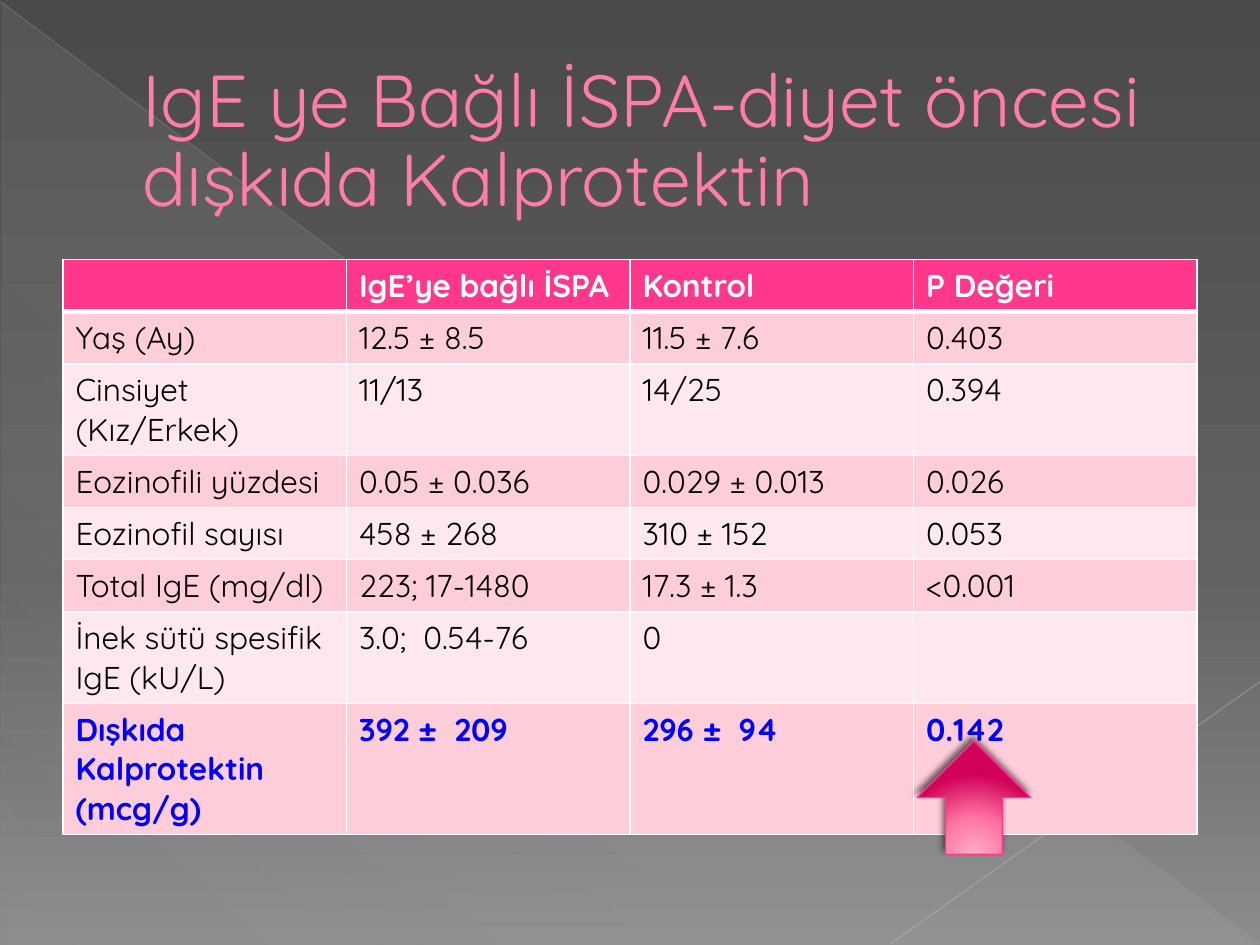
from dataclasses import dataclass

from lxml import etree
from pptx import Presentation
from pptx.dml.color import RGBColor
from pptx.enum.shapes import MSO_CONNECTOR, MSO_SHAPE
from pptx.enum.text import MSO_ANCHOR, MSO_AUTO_SIZE, PP_ALIGN
from pptx.oxml.ns import qn
from pptx.slide import Slide
from pptx.util import Inches, Pt

STRAIGHT = MSO_CONNECTOR.STRAIGHT
RIGHT_TRIANGLE = MSO_SHAPE.RIGHT_TRIANGLE
UP_ARROW = MSO_SHAPE.UP_ARROW
MIDDLE = MSO_ANCHOR.MIDDLE
SHRINK = MSO_AUTO_SIZE.TEXT_TO_FIT_SHAPE
LEFT = PP_ALIGN.LEFT

BLACK = RGBColor(0x00, 0x00, 0x00)
WHITE = RGBColor(0xFF, 0xFF, 0xFF)
BLUE = RGBColor(0x00, 0x00, 0xFF)
PINK = RGBColor(0xFF, 0x38, 0x8C)
TITLE_PINK = RGBColor(0xFF, 0x7D, 0xA7)
OUTLINE_PINK = RGBColor(0xB1, 0x27, 0x61)
ROSE = RGBColor(0xFF, 0xCE, 0xDA)
PALE_ROSE = RGBColor(0xFF, 0xE8, 0xEE)
ARROW_LIGHT = RGBColor(0xFF, 0xAF, 0xC5)
ARROW_MIDDLE = RGBColor(0xFF, 0x75, 0xA3)
ARROW_DARK = RGBColor(0xD1, 0x00, 0x58)
DARK_GREY = RGBColor(0x4A, 0x4A, 0x4A)
MIDDLE_GREY = RGBColor(0x62, 0x62, 0x62)
LIGHT_GREY = RGBColor(0x8C, 0x8C, 0x8C)
VEIL_GREY = RGBColor(0xD2, 0xD2, 0xD2)
LONG_LINE_GREY = RGBColor(0xBF, 0xBF, 0xBF)
SHORT_LINE_GREY = RGBColor(0xC6, 0xC6, 0xC6)

WIDTH, HEIGHT = Inches(10), Inches(7.5)
COLUMNS, ROWS = 20, 15

RESULTS = [
    ["", "IgE’ye bağlı İSPA", "Kontrol", "P Değeri"],
    ["Yaş (Ay)", "12.5 ± 8.5", "11.5 ± 7.6", "0.403"],
    ["Cinsiyet (Kız/Erkek)", "11/13", "14/25", "0.394"],
    ["Eozinofili yüzdesi", "0.05 ± 0.036", "0.029 ± 0.013", "0.026"],
    ["Eozinofil sayısı", "458 ± 268", "310 ± 152", "0.053"],
    ["Total IgE (mg/dl)", "223; 17-1480", "17.3 ± 1.3", "<0.001"],
    ["İnek sütü spesifik IgE (kU/L)", "3.0;  0.54-76", "0", ""],
    ["Dışkıda Kalprotektin (mcg/g)", "392 ±  209", "296 ±  94", "0.142"],
]


def add(parent, tag, **attributes):
    values = {name: str(value) for name, value in attributes.items()}
    return etree.SubElement(parent, qn(tag), values)


def add_color(parent, color, opacity=100):
    element = add(parent, "a:srgbClr", val=color)
    if opacity < 100:
        add(element, "a:alpha", val=opacity * 1000)


def grid(column, row):
    return int(WIDTH * column / COLUMNS), int(HEIGHT * row / ROWS)


@dataclass
class SlideBuilder:
    slide: Slide
    font_name: str = "Quicksand"
    title_size: float = 42
    table_size: float = 18

    def format_runs(self, paragraph, size, color, bold=False):
        for run in paragraph.runs:
            run.font.name = self.font_name
            run.font.size = Pt(size)
            run.font.color.rgb = color
            run.font.bold = bold

    def gradient(self, fill, container, stops, angle=None, focus=None):
        fill.gradient()
        gradient = container.find(".//" + qn("a:gradFill"))
        for child in list(gradient):
            gradient.remove(child)
        stop_list = add(gradient, "a:gsLst")
        for position, color, opacity in stops:
            stop = add(stop_list, "a:gs", pos=position * 1000)
            add_color(stop, color, opacity)
        if focus:
            circle = add(gradient, "a:path", path="circle")
            sides = {side: share * 1000 for side, share in zip("ltrb", focus)}
            add(circle, "a:fillToRect", **sides)
        else:
            add(gradient, "a:lin", ang=angle * 60000, scaled=0)

    def background(self, stops, angle):
        self.gradient(self.slide.background.fill, self.slide._element, stops, angle)

    def shape(self, kind, column, row, columns, rows, stops, **direction):
        shape = self.slide.shapes.add_shape(kind, *grid(column, row), *grid(columns, rows))
        shape.shadow.inherit = False
        shape.line.fill.background()
        self.gradient(shape.fill, shape._element.spPr, stops, **direction)
        return shape

    def arrow(self, column, row, columns, rows, stops, focus):
        arrow = self.shape(UP_ARROW, column, row, columns, rows, stops, focus=focus)
        arrow.line.color.rgb = PINK
        arrow.line.width = Pt(0.75)
        effects = arrow._element.spPr.find(qn("a:effectLst"))
        shadow = add(effects, "a:outerShdw", blurRad=Pt(4), dist=Pt(3),
                     dir=245 * 60000, rotWithShape=0)
        add_color(shadow, BLACK, 60)

    def line(self, start, end, color, width, opacity):
        line = self.slide.shapes.add_connector(STRAIGHT, *grid(*start), *grid(*end))
        line.line.color.rgb = color
        line.line.width = Pt(width)
        properties = line._element.spPr
        add(properties.find(".//" + qn("a:srgbClr")), "a:alpha", val=opacity * 1000)
        add(properties, "a:effectLst")

    def title(self, text, column, row, columns, rows):
        title = self.slide.shapes.title
        self.slide.shapes._spTree.append(title._element)
        title.left, title.top = grid(column, row)
        title.width, title.height = grid(columns, rows)
        text_frame = title.text_frame
        text_frame.text = text
        text_frame.word_wrap = True
        text_frame.vertical_anchor = MIDDLE
        text_frame.auto_size = SHRINK
        paragraph = text_frame.paragraphs[0]
        paragraph.alignment = LEFT
        paragraph._p.get_or_add_pPr().set("marL", str(Inches(0.53)))
        self.format_runs(paragraph, self.title_size, TITLE_PINK)
        for run in paragraph.runs:
            outline = etree.Element(qn("a:ln"), w=str(Pt(0.5)))
            add_color(add(outline, "a:solidFill"), OUTLINE_PINK)
            run.font._element.insert(0, outline)

    def borders(self, cell, top, bottom):
        properties = cell._tc.get_or_add_tcPr()
        for side, width in (("L", 1), ("R", 1), ("T", top), ("B", bottom)):
            border = add(properties, "a:ln" + side, w=Pt(width))
            add_color(add(border, "a:solidFill"), WHITE)

    def table(self, values, column, row, columns, rows):
        frame = self.slide.shapes.add_table(
            len(values), len(values[0]), *grid(column, row), *grid(columns, rows))
        last = len(values) - 1
        for index, texts in enumerate(values):
            fill = PINK if index == 0 else ROSE if index % 2 else PALE_ROSE
            color = {0: WHITE, last: BLUE}.get(index, BLACK)
            for position, text in enumerate(texts):
                cell = frame.table.cell(index, position)
                cell.text_frame.text = text
                self.format_runs(cell.text_frame.paragraphs[0], self.table_size,
                                 color, index in (0, last))
                self.borders(cell, 3 if index == 1 else 1, 3 if index == 0 else 1)
                cell.fill.solid()
                cell.fill.fore_color.rgb = fill


def main():
    presentation = Presentation()
    presentation.slide_width, presentation.slide_height = WIDTH, HEIGHT
    builder = SlideBuilder(presentation.slides.add_slide(presentation.slide_layouts[5]))
    builder.background([(0, DARK_GREY, 100), (60, MIDDLE_GREY, 100),
                        (100, LIGHT_GREY, 100)], angle=90)
    builder.shape(RIGHT_TRIANGLE, 0.02, 0.04, 19.96, 14.96,
                  [(0, VEIL_GREY, 10), (70, VEIL_GREY, 8), (100, VEIL_GREY, 1)], angle=133)
    builder.line((0, 0.02), (19.98, 14.98), LONG_LINE_GREY, 0.39, 35)
    builder.line((20, 10.82), (14.14, 14.98), SHORT_LINE_GREY, 0.47, 45)
    builder.title("IgE ye Bağlı İSPA-diyet öncesi\vdışkıda Kalprotektin", 1, 0.58, 18, 3.06)
    builder.table(RESULTS, 1, 4.12, 18, 6.56)
    builder.arrow(14.56, 11.76, 1.8, 1.8,
                  [(0, ARROW_LIGHT, 100), (46, ARROW_MIDDLE, 100), (100, ARROW_DARK, 100)],
                  focus=(50, 155, 50, -55))
    presentation.save("out.pptx")


if __name__ == "__main__":
    main()
